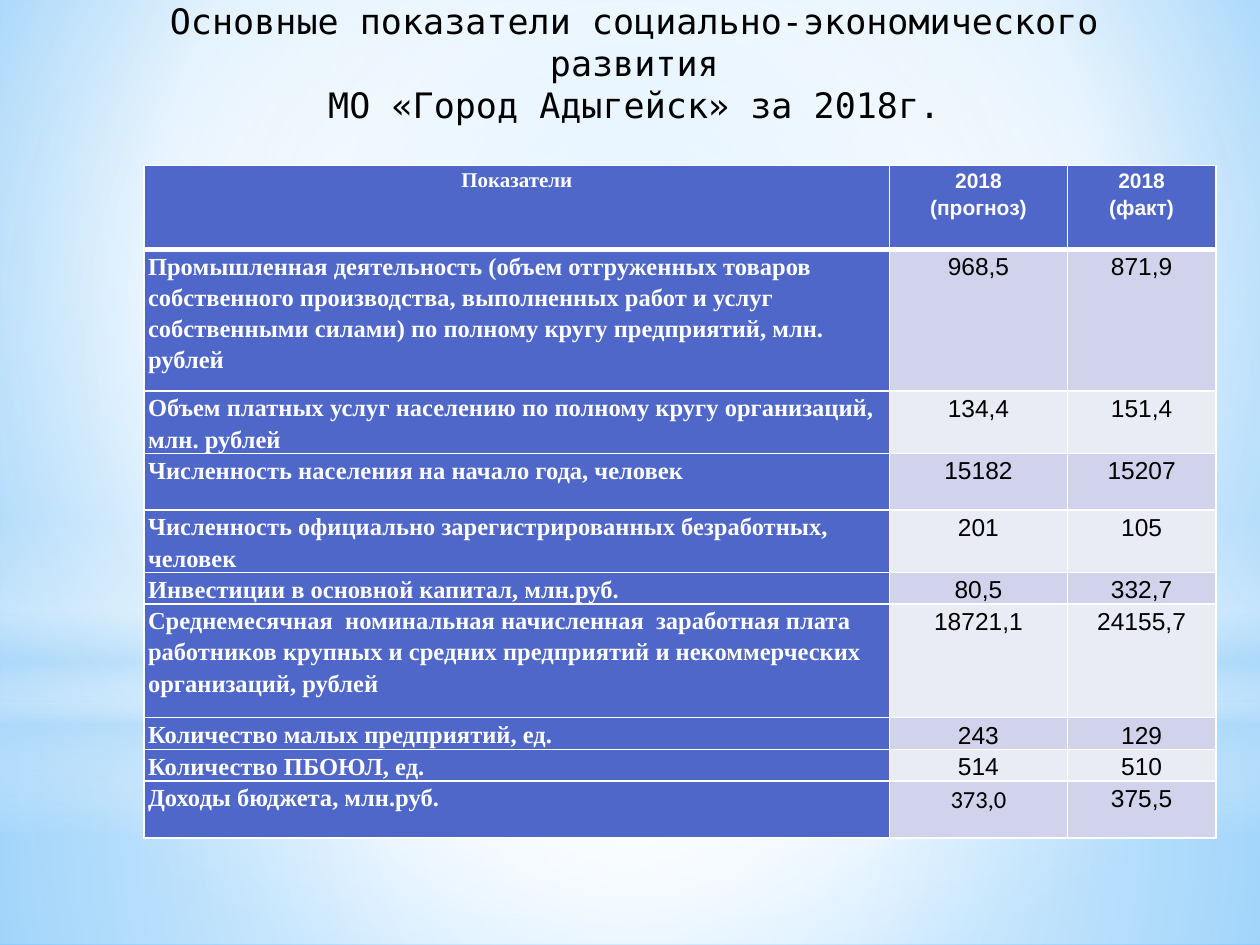
from dataclasses import dataclass

from lxml.etree import SubElement
from pptx import Presentation
from pptx.dml.color import RGBColor
from pptx.enum.shapes import MSO_SHAPE
from pptx.enum.text import MSO_ANCHOR, MSO_AUTO_SIZE, PP_ALIGN
from pptx.oxml.ns import qn
from pptx.util import Pt


@dataclass(frozen=True)
class Theme:
    """Colours, fonts and type sizes of the slide."""
    white: str = "FFFFFF"
    black: str = "000000"
    haze: str = "B4DCFA"
    sky_edge: str = "5BB9FF"
    sky: str = "9ED5FF"
    label_fill: str = "4E67C8"
    bands: tuple = ("D0D3EB", "E9EBF5")
    title_font: str = "DejaVu Sans Mono"
    label_font: str = "Times New Roman"
    value_font: str = "Arial"
    budget_font: str = "Calibri"
    title_size: int = 20
    header_size: int = 12
    body_size: int = 14


THEME = Theme()
TITLE = "Основные показатели социально-экономического развития\nМО «Город Адыгейск» за 2018г."
HEADER = ("Показатели", "2018\n(прогноз)", "2018\n(факт)")
INDICATORS = [
    ("Промышленная деятельность (объем отгруженных товаров собственного производства, "
     "выполненных работ и услуг собственными силами) по полному кругу предприятий, "
     "млн. рублей", "968,5", "871,9"),
    ("Объем платных услуг населению по полному кругу организаций, млн. рублей",
     "134,4", "151,4"),
    ("Численность населения на начало года, человек", "15182", "15207"),
    ("Численность официально зарегистрированных безработных, человек", "201", "105"),
    ("Инвестиции в основной капитал, млн.руб.", "80,5", "332,7"),
    ("Среднемесячная  номинальная начисленная  заработная плата  работников крупных "
     "и средних предприятий и некоммерческих организаций, рублей", "18721,1", "24155,7"),
    ("Количество малых предприятий, ед.", "243", "129"),
    ("Количество ПБОЮЛ, ед.", "514", "510"),
    ("Доходы бюджета, млн.руб.", "373,0", "375,5"),
]
COLUMN_WIDTHS = (426, 101.5, 85)
ROW_HEIGHTS = (48, 81, 32.4, 32.4, 32.4, 16, 65, 16, 16, 32.4)


def paint_gradient(fill, owner, stops, center=None):
    """Fill with (position, colour, opacity) stops, circular around center or downward."""
    fill.gradient()
    gradient = next(owner.iter(qn("a:gradFill")))
    gradient.clear()
    gradient.set("rotWithShape", "1")
    stop_list = SubElement(gradient, qn("a:gsLst"))
    for position, color, opacity in stops:
        stop = SubElement(stop_list, qn("a:gs"), pos=str(position * 1000))
        tone = SubElement(stop, qn("a:srgbClr"), val=color)
        if opacity < 100:
            SubElement(tone, qn("a:alpha"), val=str(opacity * 1000))
    if center:
        circle = SubElement(gradient, qn("a:path"), {"path": "circle"})
        sides = {side: str(share * 1000) for side, share in zip("ltrb", center)}
        SubElement(circle, qn("a:fillToRect"), sides)
    else:
        SubElement(gradient, qn("a:lin"), ang="5400000", scaled="0")


def add_sky(slide, left, top, width, height):
    """Paint the background and its translucent layers of light."""
    white, haze = THEME.white, THEME.haze
    paint_gradient(slide.background.fill, slide.element,
                   [(0, THEME.sky, 100), (60, white, 100), (100, THEME.sky_edge, 100)],
                   (20, 10, 20, 60))
    middle = (50, 50, 50, 50)
    horizon = 402
    layers = [
        (MSO_SHAPE.RECTANGLE, horizon, height - horizon, middle,
         [(0, white, 91), (37, white, 76), (100, haze, 79)]),
        (MSO_SHAPE.RECTANGLE, 0, horizon, middle,
         [(0, white, 89), (48, white, 62), (100, haze, 79)]),
        (MSO_SHAPE.RECTANGLE, 297, 180, None,
         [(0, white, 0), (29, white, 30), (45, haze, 40),
          (55, white, 26), (65, haze, 60), (100, white, 0)]),
        (MSO_SHAPE.OVAL, 126, horizon, middle, [(0, white, 100), (56, white, 0)]),
    ]
    for outline, offset, depth, center, stops in layers:
        layer = slide.shapes.add_shape(outline, Pt(left), Pt(top + offset),
                                       Pt(width), Pt(depth))
        layer.shadow.inherit = False
        layer.line.fill.background()
        paint_gradient(layer.fill, layer.element, stops, center)


def style_text(frame, font, size, color, bold, alignment, spacing):
    """Format every paragraph and run of a text frame."""
    for paragraph in frame.paragraphs:
        paragraph.alignment = alignment
        paragraph.line_spacing = spacing
        for run in paragraph.runs:
            run.font.name = font
            run.font.size = Pt(size)
            run.font.bold = bold
            run.font.color.rgb = RGBColor.from_string(color)


def set_borders(cell, top, bottom):
    """Draw white cell borders, with the top and bottom widths given."""
    properties = cell._tc.get_or_add_tcPr()
    for index, (side, weight) in enumerate(
            (("lnL", 1), ("lnR", 1), ("lnT", top), ("lnB", bottom))):
        border = properties.makeelement(qn(f"a:{side}"), {"w": str(Pt(weight))})
        solid = SubElement(border, qn("a:solidFill"))
        SubElement(solid, qn("a:srgbClr"), val=THEME.white)
        properties.insert(index, border)


def cell_style(row, column, text):
    """Return fill, font, size, text colour, boldness and alignment of a cell."""
    size = THEME.body_size if row else THEME.header_size
    alignment = PP_ALIGN.LEFT if row and not column else PP_ALIGN.CENTER
    font = THEME.value_font if column else THEME.label_font
    if not row or not column:
        return THEME.label_fill, font, size, THEME.white, True, alignment
    if text == "373,0":
        font = THEME.budget_font
    return THEME.bands[(row - 1) % 2], font, size, THEME.black, False, alignment


def add_indicators(slide, left, top):
    """Place the table of indicators with its corner at left, top."""
    rows = [HEADER, *INDICATORS]
    table = slide.shapes.add_table(len(rows), len(HEADER), Pt(left), Pt(top),
                                   Pt(sum(COLUMN_WIDTHS)), Pt(sum(ROW_HEIGHTS))).table
    for column, width in zip(table.columns, COLUMN_WIDTHS):
        column.width = Pt(width)
    for row, height in zip(table.rows, ROW_HEIGHTS):
        row.height = Pt(height)
    for row, texts in enumerate(rows):
        for column, text in enumerate(texts):
            cell = table.cell(row, column)
            fill, font, size, color, bold, alignment = cell_style(row, column, text)
            cell.text_frame.text = text
            cell.margin_left = cell.margin_right = Pt(2.2)
            cell.margin_top = cell.margin_bottom = 0
            cell.fill.solid()
            cell.fill.fore_color.rgb = RGBColor.from_string(fill)
            style_text(cell.text_frame, font, size, color, bold, alignment, 1.15)
            set_borders(cell, 3 if row == 1 else 1, 1 if row else 3)


def place_title(slide, left, top, width, height):
    """Put the title in its box, in front of the sky."""
    title = slide.shapes.title
    title.left, title.top, title.width, title.height = map(Pt, (left, top, width, height))
    frame = title.text_frame
    frame.text = TITLE
    frame.word_wrap = True
    frame.auto_size = MSO_AUTO_SIZE.NONE
    frame.vertical_anchor = MSO_ANCHOR.MIDDLE
    frame.margin_bottom = Pt(23)
    style_text(frame, THEME.title_font, THEME.title_size, THEME.black, False,
               PP_ALIGN.CENTER, 1.0)
    for paragraph in frame.paragraphs:
        paragraph.space_before = Pt(0)
    slide.shapes.element.append(title.element)


def main():
    """Build and save the slide."""
    presentation = Presentation()
    presentation.slide_width, presentation.slide_height = Pt(720), Pt(540)
    slide = presentation.slides.add_slide(presentation.slide_layouts[5])
    add_sky(slide, 0, 0, 720, 540)
    add_indicators(slide, 82.4, 94.5)
    place_title(slide, 76.3, 6.5, 572.4, 77.8)
    presentation.save("out.pptx")


if __name__ == "__main__":
    main()
